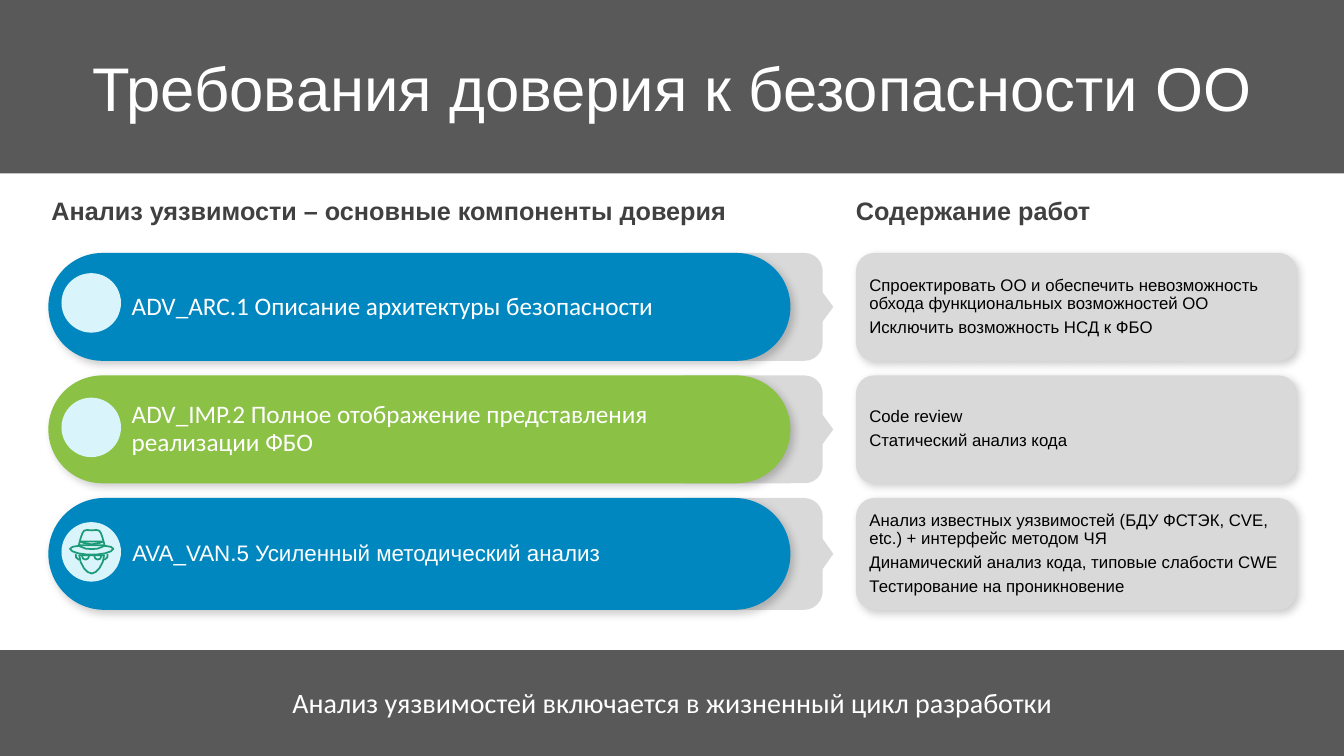
from lxml import etree
from pptx import Presentation
from pptx.dml.color import RGBColor
from pptx.enum.shapes import MSO_SHAPE
from pptx.enum.text import MSO_ANCHOR, PP_ALIGN
from pptx.oxml.ns import qn
from pptx.util import Inches, Pt

TITLE = "Требования доверия к безопасности ОО"
FOOTER = "Анализ уязвимостей включается в жизненный цикл разработки"
HEADINGS = [
    ("Анализ уязвимости – основные компоненты доверия", 0.51, 7.05),
    ("Содержание работ", 8.49, 4.37),
]
# component, font, size, colour, row height, tasks
ROWS = [
    ("ADV_ARC.1 Описание архитектуры безопасности", "Calibri", 18, "0187C0", 1.07,
     ["Спроектировать ОО и обеспечить невозможность обхода функциональных возможностей ОО",
      "Исключить возможность НСД к ФБО"]),
    ("ADV_IMP.2 Полное отображение представления реализации ФБО", "Calibri", 18, "8BC145", 1.07,
     ["Code review", "Статический анализ кода"]),
    ("AVA_VAN.5 Усиленный методический анализ", "Arial", 16, "0187C0", 1.11,
     ["Анализ известных уязвимостей (БДУ ФСТЭК, CVE, etc.) + интерфейс методом ЧЯ",
      "Динамический анализ кода, типовые слабости CWE",
      "Тестирование на проникновение"]),
]
DARK, GREY, WHITE = "595959", "D9D9D9", "FFFFFF"
ROW_TOP, ROW_STEP = 2.51, 1.215
CIRCLE_TOP, CIRCLE_STEP, CIRCLE_SIZE = 2.71, 1.235, 0.59

# Left halves of the hat-and-glasses icon, in thousandths of an inch
ICON_AXIS = 910
HALF_CONTOURS = [
    [(910, 5262), (865, 5258), (835, 5265), (818, 5290), (802, 5335), (782, 5410)],
    [(910, 5400), (850, 5393), (795, 5373)],
    [(910, 5448), (850, 5443), (780, 5415), (720, 5425), (695, 5445),
     (720, 5470), (780, 5490), (850, 5500), (910, 5503)],
    [(910, 5690), (870, 5675), (835, 5640), (800, 5575), (787, 5510)],
]
SIDE_CONTOURS = [
    [(910, 5503), (885, 5510), (875, 5540), (850, 5552), (825, 5543), (812, 5510)],
    [(752, 5495), (755, 5530), (785, 5555)],
]


def color(hex_string):
    return RGBColor.from_string(hex_string)


def add_box(kind, left, top, width, height, fill):
    box = page.shapes.add_shape(kind, Inches(left), Inches(top), Inches(width), Inches(height))
    box.shadow.inherit = False
    box.fill.solid()
    box.fill.fore_color.rgb = color(fill)
    box.line.fill.background()
    return box


def add_shadow(box):
    effects = box._element.spPr.find(qn("a:effectLst"))
    shadow = etree.SubElement(effects, qn("a:outerShdw"), blurRad=str(Pt(6)), dist=str(Pt(3)),
                              dir=str(45 * 60000), algn="tl", rotWithShape="0")
    black = etree.SubElement(shadow, qn("a:srgbClr"), val="000000")
    etree.SubElement(black, qn("a:alpha"), val="20000")


def write(box, lines, font, size, hex_string, bold=False, align=PP_ALIGN.LEFT,
          anchor=MSO_ANCHOR.MIDDLE, insets=(0.1, 0.05, 0.1, 0.05), spacing=None, after=0):
    """Fill a box with one paragraph a line; insets run left, top, right, bottom."""
    frame = box.text_frame
    frame.word_wrap = True
    frame.vertical_anchor = anchor
    (frame.margin_left, frame.margin_top,
     frame.margin_right, frame.margin_bottom) = map(Inches, insets)
    for index, line in enumerate(lines):
        para = frame.add_paragraph() if index else frame.paragraphs[0]
        para.alignment = align
        para.space_after = Pt(after)
        if spacing:
            para.line_spacing = spacing
        span = para.add_run()
        span.text = line
        span.font.name = font
        span.font.size = Pt(size)
        span.font.bold = bold
        span.font.color.rgb = color(hex_string)


def add_label(left, top, width, height, *text, **style):
    box = page.shapes.add_textbox(Inches(left), Inches(top), Inches(width), Inches(height))
    write(box, *text, anchor=MSO_ANCHOR.TOP, **style)


def mirrored(points):
    return [(2 * ICON_AXIS - x, y) for x, y in points]


def add_icon():
    contours = [half + mirrored(half)[::-1] for half in HALF_CONTOURS]
    contours += SIDE_CONTOURS + [mirrored(side) for side in SIDE_CONTOURS]
    builder = page.shapes.build_freeform(*contours[0][0], scale=Inches(1) / 1000)
    for contour in contours:
        builder.move_to(*contour[0])
        builder.add_line_segments(contour[1:], close=False)
    icon = builder.convert_to_shape()
    icon.shadow.inherit = False
    icon.fill.background()
    icon.line.color.rgb = color("1D9A78")
    icon.line.width = Pt(1.25)


def add_row(index, component, font, size, fill, height, tasks):
    top = ROW_TOP + index * ROW_STEP
    middle = top + height / 2
    add_box(MSO_SHAPE.ROUNDED_RECTANGLE, 6.62, top, 1.54, height, GREY)
    tip_width, tip_height = 0.28 * height, 0.11
    tip = add_box(MSO_SHAPE.ISOSCELES_TRIANGLE, 8.21 - tip_width / 2, middle - tip_height / 2,
                  tip_width, tip_height, GREY)
    tip.rotation = 90

    pill = add_box(MSO_SHAPE.ROUNDED_RECTANGLE, 0.48, top, 7.36, height, fill)
    pill.adjustments[0] = 0.5
    add_shadow(pill)
    write(pill, [component], font, size, WHITE, insets=(0.67, 0.05, 0.04, 0.05), spacing=0.9)

    card = add_box(MSO_SHAPE.ROUNDED_RECTANGLE, 8.49, top, 4.37, height, GREY)
    add_shadow(card)
    write(card, tasks, "Arial", 12, "000000", insets=(0.08,) * 4, spacing=0.9, after=4)

    add_box(MSO_SHAPE.OVAL, 0.61, CIRCLE_TOP + index * CIRCLE_STEP,
            CIRCLE_SIZE, CIRCLE_SIZE, "D9F5FB")


deck = Presentation()
deck.slide_width, deck.slide_height = Inches(13.33), Inches(7.5)
page = deck.slides.add_slide(deck.slide_layouts[5])

add_box(MSO_SHAPE.RECTANGLE, 0, 0, 13.33, 1.72, DARK)
title = page.shapes.title
title.left, title.top, title.width, title.height = map(Inches, (0.76, 0.5, 11.82, 0.73))
title.fill.solid()
title.fill.fore_color.rgb = color(DARK)
write(title, [TITLE], "Arial", 44, WHITE, align=PP_ALIGN.CENTER)
page.shapes._spTree.append(title._element)  # bring the title in front of its band

for heading, left, width in HEADINGS:
    add_label(left, 1.94, width, 0.3, [heading], "Arial", 18, "404040",
              bold=True, insets=(0,) * 4)
for index, row in enumerate(ROWS):
    add_row(index, *row)
add_icon()

add_box(MSO_SHAPE.RECTANGLE, 0, 6.45, 13.33, 1.05, DARK)
add_label(0.53, 6.75, 12.28, 0.44, [FOOTER], "Calibri", 20, WHITE, align=PP_ALIGN.CENTER)

deck.save("out.pptx")
